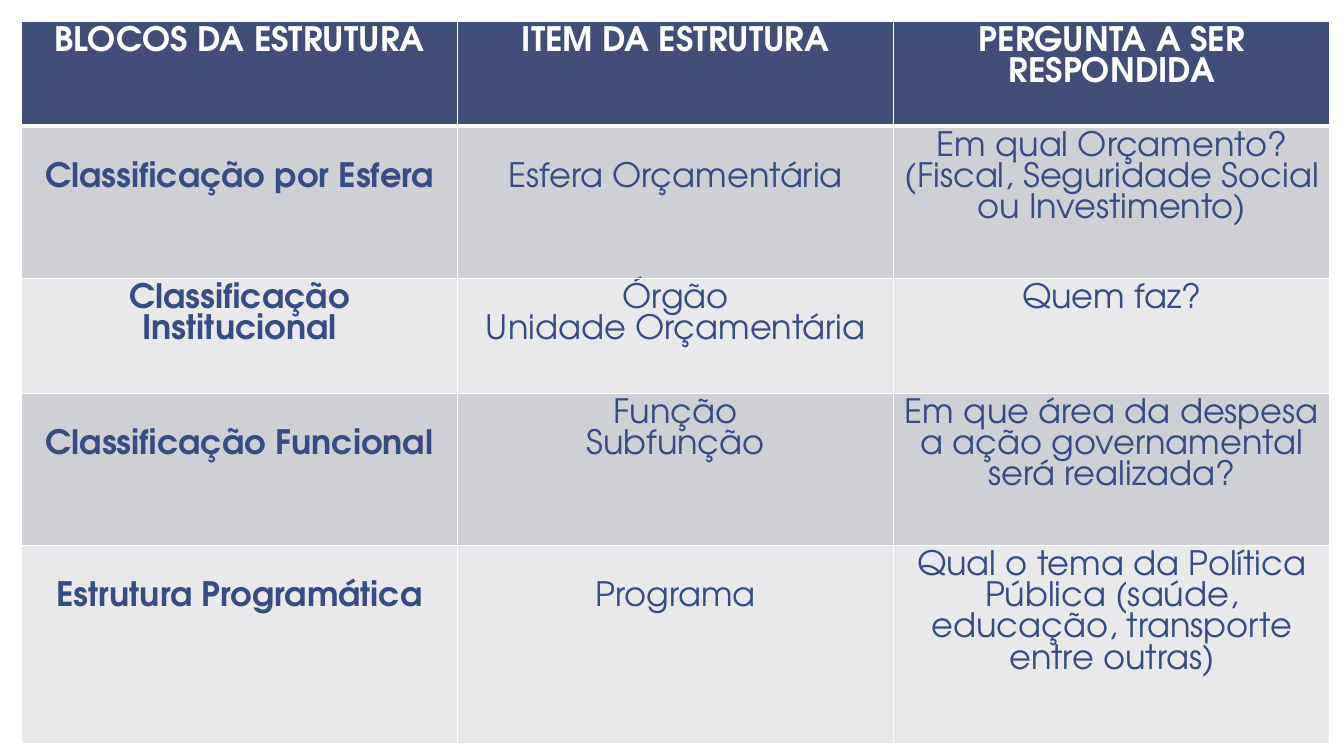
from pptx import Presentation
from pptx.dml.color import RGBColor
from pptx.enum.text import PP_ALIGN
from pptx.oxml import parse_xml
from pptx.oxml.ns import nsdecls
from pptx.util import Pt

HEADINGS = ["BLOCOS DA ESTRUTURA", "ITEM DA ESTRUTURA", "PERGUNTA A SER RESPONDIDA"]
BLOCKS = [
    ("Classificação por Esfera", "Esfera Orçamentária",
     "Em qual Orçamento? (Fiscal, Seguridade Social ou Investimento)"),
    ("Classificação Institucional", "Órgão\nUnidade Orçamentária", "Quem faz?"),
    ("Classificação Funcional", "Função\nSubfunção",
     "Em que área da despesa a ação governamental será realizada?"),
    ("Estrutura Programática", "Programa",
     "Qual o tema da Política Pública (saúde, educação, transporte entre outras)"),
]
LOWERED = {"Classificação por Esfera", "Esfera Orçamentária", "Classificação Funcional",
           "Estrutura Programática", "Programa"}
ROW_HEIGHTS = [74.9, 108.7, 82.1, 108.7, 141.8]
COLUMN_WIDTH = 311.6
LEFT, TOP = 15.2, 15.2
INSET, LINE_PITCH = 3.6, 22.4

THEME = {
    "font": "TeX Gyre Adventor",
    "size": 24,
    "heading_text": "FFFFFF",
    "body_text": "374C81",
    "heading_fill": "414E77",
    "bands": ["CFD0D6", "E9E9EC"],
    "border": "FFFFFF",
    "thin": 1,
    "thick": 3,
}


def add_borders(cell, top, bottom):
    widths = {"lnL": THEME["thin"], "lnR": THEME["thin"], "lnT": top, "lnB": bottom}
    properties = cell._tc.get_or_add_tcPr()
    for position, (side, width) in enumerate(widths.items()):
        properties.insert(position, parse_xml(
            f'<a:{side} {nsdecls("a")} w="{Pt(width)}"><a:solidFill>'
            f'<a:srgbClr val="{THEME["border"]}"/></a:solidFill></a:{side}>'))


def fill_cell(cell, wording, fill, color, bold):
    cell.fill.solid()
    cell.fill.fore_color.rgb = RGBColor.from_string(fill)
    cell.margin_top = Pt(INSET + (LINE_PITCH if wording in LOWERED else 0))
    cell.text_frame.text = wording
    for paragraph in cell.text_frame.paragraphs:
        paragraph.alignment = PP_ALIGN.CENTER
        for run in paragraph.runs:
            run.font.name = THEME["font"]
            run.font.size = Pt(THEME["size"])
            run.font.bold = bold
            run.font.color.rgb = RGBColor.from_string(color)


def main():
    deck = Presentation()
    deck.slide_width, deck.slide_height = Pt(960), Pt(540)
    slide = deck.slides.add_slide(deck.slide_layouts[6])
    rows = [HEADINGS, *BLOCKS]
    structure = slide.shapes.add_table(
        len(rows), len(HEADINGS), Pt(LEFT), Pt(TOP),
        Pt(COLUMN_WIDTH * len(HEADINGS)), Pt(sum(ROW_HEIGHTS))).table
    for column in structure.columns:
        column.width = Pt(COLUMN_WIDTH)
    for r, (wordings, height) in enumerate(zip(rows, ROW_HEIGHTS)):
        structure.rows[r].height = Pt(height)
        heading = r == 0
        fill = THEME["heading_fill"] if heading else THEME["bands"][(r - 1) % 2]
        color = THEME["heading_text"] if heading else THEME["body_text"]
        for c, wording in enumerate(wordings):
            cell = structure.cell(r, c)
            fill_cell(cell, wording, fill, color, heading or c == 0)
            add_borders(cell, THEME["thick"] if r == 1 else THEME["thin"],
                        THEME["thick"] if heading else THEME["thin"])
    deck.save("out.pptx")


if __name__ == "__main__":
    main()
